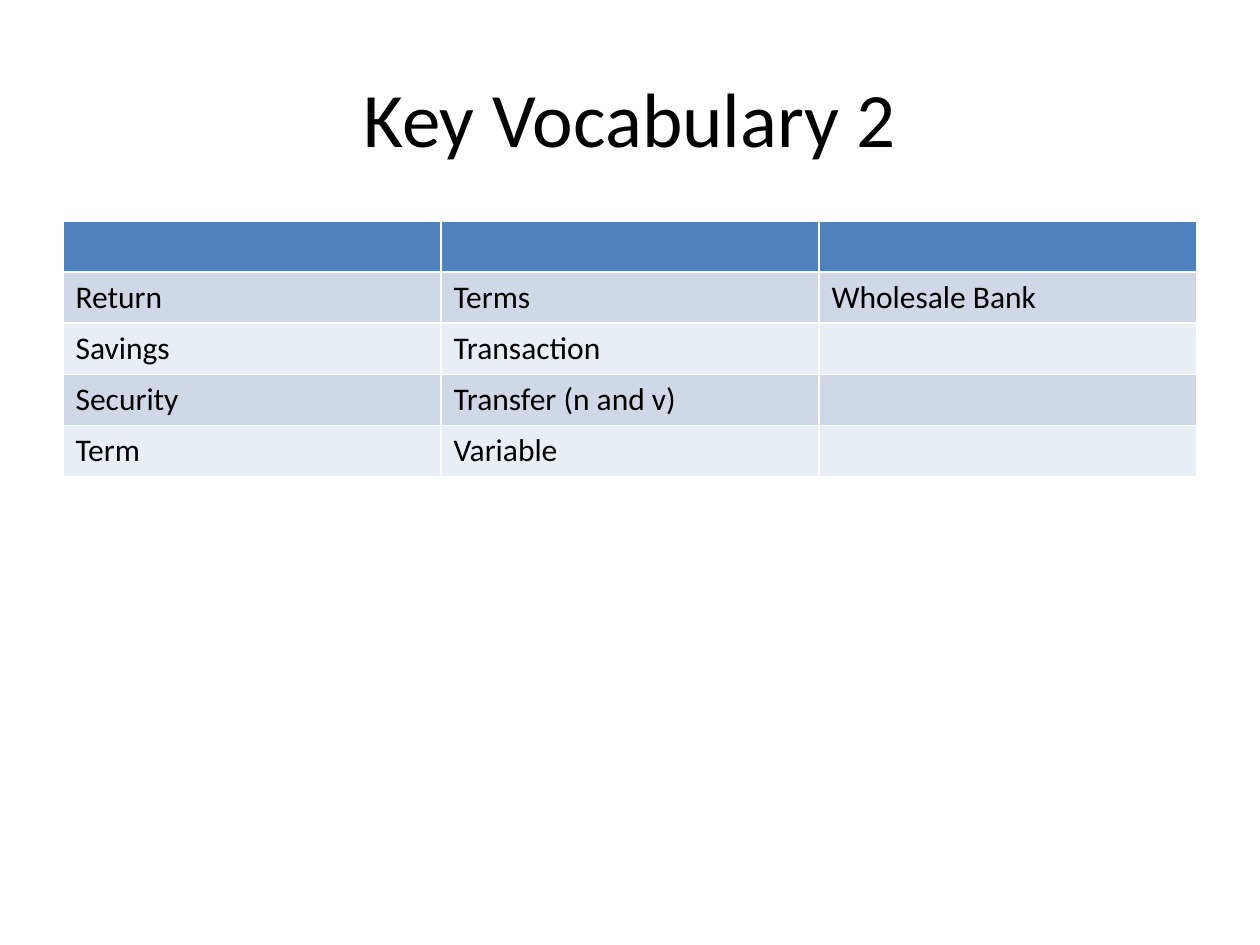
from pptx import Presentation
from pptx.dml.color import RGBColor
from pptx.enum.text import MSO_ANCHOR, PP_ALIGN
from pptx.util import Emu, Pt

COLORS = {
    "text": "000000",
    "header": "4F81BD",
    "odd_row": "D0D8E8",
    "even_row": "E9EDF4",
}
FONT = "Calibri"
MARGIN, CONTENT_WIDTH = 63, 1134
TABLE_TOP, ROW_HEIGHT = 221, 51
VOCABULARY = [
    ["", "", ""],
    ["Return", "Terms", "Wholesale Bank"],
    ["Savings", "Transaction", ""],
    ["Security", "Transfer (n and v)", ""],
    ["Term", "Variable", ""],
]


def px(length):
    return Emu(round(length * 914400 / 126))


def add_run(paragraph, text, size):
    run = paragraph.add_run()
    run.text = text
    run.font.name = FONT
    run.font.size = Pt(size)
    run.font.color.rgb = RGBColor.from_string(COLORS["text"])


presentation = Presentation()
presentation.slide_width = px(1260)
presentation.slide_height = px(945)
slide = presentation.slides.add_slide(presentation.slide_layouts[5])

title = slide.shapes.title
title.left, title.top = px(MARGIN), px(38)
title.width, title.height = px(CONTENT_WIDTH), px(158)
title.text_frame.vertical_anchor = MSO_ANCHOR.MIDDLE
title_paragraph = title.text_frame.paragraphs[0]
title_paragraph.alignment = PP_ALIGN.CENTER
add_run(title_paragraph, "Key Vocabulary 2", 44)

# The default table style supplies the white borders and the thick header rule.
table = slide.shapes.add_table(
    len(VOCABULARY), len(VOCABULARY[0]),
    px(MARGIN), px(TABLE_TOP), px(CONTENT_WIDTH), px(ROW_HEIGHT * len(VOCABULARY)),
).table

for row_index, terms in enumerate(VOCABULARY):
    if row_index == 0:
        fill_name = "header"
    else:
        fill_name = "odd_row" if row_index % 2 else "even_row"
    for column_index, term in enumerate(terms):
        cell = table.cell(row_index, column_index)
        cell.fill.solid()
        cell.fill.fore_color.rgb = RGBColor.from_string(COLORS[fill_name])
        if term:
            add_run(cell.text_frame.paragraphs[0], term, 18)

presentation.save("out.pptx")
